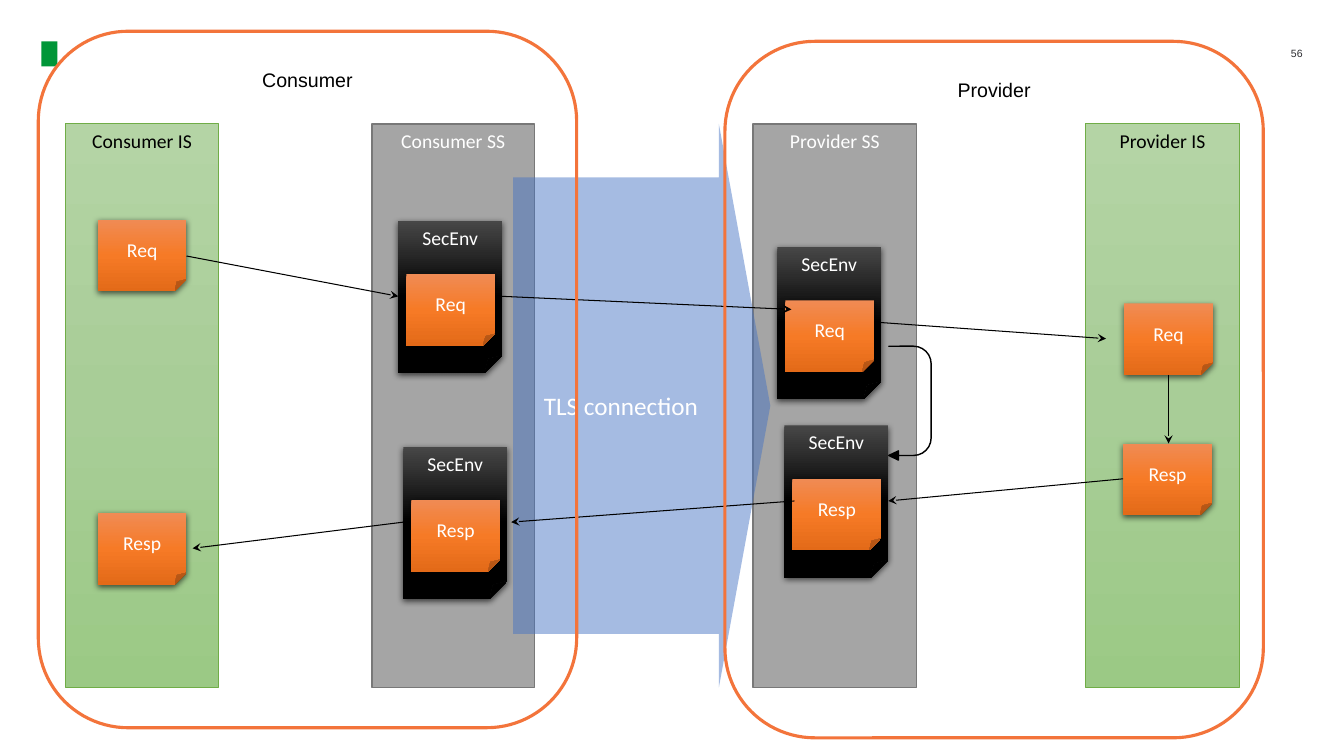
import copy

import lxml.etree
import pptx
import pptx.dml.color
import pptx.enum.shapes
import pptx.enum.text
import pptx.oxml.ns
import pptx.util

RGB = pptx.dml.color.RGBColor
SHAPE = pptx.enum.shapes.MSO_SHAPE
ALIGN = pptx.enum.text.PP_ALIGN
ANCHOR = pptx.enum.text.MSO_ANCHOR
qn = pptx.oxml.ns.qn
inches = pptx.util.Inches

BLACK, WHITE = RGB(0, 0, 0), RGB(255, 255, 255)
INK = RGB(0x2C, 0x2C, 0x30)
MARK_GREEN = RGB(0x00, 0x96, 0x38)
GREEN_EDGE = RGB(0x70, 0xAD, 0x47)
GREY, GREY_EDGE = RGB(0xA5, 0xA5, 0xA5), RGB(0x78, 0x78, 0x78)
BLUE, FRAME_ORANGE = RGB(0x44, 0x72, 0xC4), RGB(0xF3, 0x74, 0x3B)
GREEN_BLEND = (RGB(0xB4, 0xD4, 0xA5), RGB(0xA8, 0xCD, 0x97), RGB(0x9B, 0xC9, 0x85))
ORANGE_BLEND = (RGB(0xF0, 0x8B, 0x54), RGB(0xF6, 0x7A, 0x26), RGB(0xE3, 0x6A, 0x18))
BLACK_BLEND = (RGB(0x47, 0x47, 0x47), BLACK, BLACK)

# Content: positions in inches
SLIDE_W, SLIDE_H = 13.33, 7.5
COLUMN_TOP, COLUMN_H = 1.23, 5.59
SHEET_W, SHEET_H = 0.88, 0.71
ENV_W, ENV_H = 1.03, 1.51
SHEET_IN_ENV = (0.08, 0.53)
CORNER = 0.167

SYSTEMS = [("Consumer IS", 0.65), ("Provider IS", 10.77)]
SERVERS = [("Consumer SS", 3.69, 1.61), ("Provider SS", 7.47, 1.62)]
LOOSE_SHEETS = [("Req", 0.97, 2.18), ("Req", 11.15, 3.01),
                ("Resp", 11.14, 4.4), ("Resp", 0.97, 5.09)]
SECURE_ENVS = [("Req", 3.95, 2.19), ("Req", 7.71, 2.45),
               ("Resp", 7.78, 4.22), ("Resp", 4.0, 4.43)]
MESSAGES = [  # start x, y, end x, y, along the route
    (1.85, 2.54, 3.95, 2.94), (4.98, 2.94, 7.85, 3.07), (8.74, 3.2, 10.97, 3.36),
    (11.59, 3.72, 11.59, 4.4),
    (11.14, 4.75, 8.81, 4.97), (7.88, 4.97, 5.07, 5.18), (4.0, 5.18, 1.91, 5.44)]
PARTIES = [("Consumer", 0.38, 0.31), ("Provider", 7.19, 0.41)]
PARTY_W, PARTY_H = 5.34, 6.91


def write(box, text, size=14, color=WHITE, font="Calibri", anchor=ANCHOR.TOP,
          align=ALIGN.CENTER, margins=(0.1, 0.05)):
    frame = box.text_frame
    frame.word_wrap = True
    frame.vertical_anchor = anchor
    frame.margin_left = frame.margin_right = inches(margins[0])
    frame.margin_top = frame.margin_bottom = inches(margins[1])
    para = frame.paragraphs[0]
    para.alignment = align
    span = para.add_run()
    span.text = text
    span.font.size = pptx.util.Pt(size)
    span.font.name = font
    span.font.color.rgb = color


def blend(box, colors):
    """Fill from top to bottom with three evenly spaced colours."""
    box.fill.gradient()
    box.fill.gradient_angle = 270
    stop_list = box._element.spPr.find(".//" + qn("a:gsLst"))
    stop_list.append(copy.deepcopy(stop_list[-1]))
    for index, (stop, color) in enumerate(zip(box.fill.gradient_stops, colors)):
        stop.color.rgb = color
        stop.position = index / 2


def set_adjustments(box, values):
    """Write the guides directly, as some presets list none by default."""
    guides = box._element.spPr.find(".//" + qn("a:avLst"))
    for guide in list(guides):
        guides.remove(guide)
    for number, value in enumerate(values, 1):
        name = "adj" if len(values) == 1 else f"adj{number}"
        lxml.etree.SubElement(guides, qn("a:gd"), name=name,
                              fmla=f"val {round(value * 100000)}")


def add_box(page, kind, left, top, width, height, fill=None, edge=None,
            weight=1.0, adjust=()):
    box = page.shapes.add_shape(kind, inches(left), inches(top),
                                inches(width), inches(height))
    box.shadow.inherit = False
    if adjust:
        set_adjustments(box, adjust)
    if isinstance(fill, RGB):
        box.fill.solid()
        box.fill.fore_color.rgb = fill
    elif fill:
        blend(box, fill)
    else:
        box.fill.background()
    if edge is None:
        box.line.fill.background()
    else:
        box.line.color.rgb = edge
        box.line.width = pptx.util.Pt(weight)
    return box


def add_folded(page, left, top, width, height, colors, text, anchor):
    box = add_box(page, SHAPE.FOLDED_CORNER, left, top, width, height, colors,
                  adjust=(CORNER,))
    effects = box._element.spPr.find(qn("a:effectLst"))
    shadow = lxml.etree.SubElement(effects, qn("a:outerShdw"), blurRad="57150",
                                   dist="19050", dir="5400000", algn="ctr",
                                   rotWithShape="0")
    tone = lxml.etree.SubElement(shadow, qn("a:srgbClr"), val="000000")
    lxml.etree.SubElement(tone, qn("a:alpha"), val="62000")
    write(box, text, anchor=anchor)


def add_sheet(page, text, left, top):
    add_folded(page, left, top, SHEET_W, SHEET_H, ORANGE_BLEND, text, ANCHOR.MIDDLE)


def add_message(page, ends):
    arrow = page.shapes.add_connector(pptx.enum.shapes.MSO_CONNECTOR.STRAIGHT,
                                      *(inches(value) for value in ends))
    arrow.line.color.rgb = BLACK
    arrow.line.width = pptx.util.Pt(0.75)
    properties = arrow._element.spPr
    lxml.etree.SubElement(properties.find(qn("a:ln")), qn("a:tailEnd"), type="stealth")
    lxml.etree.SubElement(properties, qn("a:effectLst"))


def main():
    deck = pptx.Presentation()
    deck.slide_width, deck.slide_height = inches(SLIDE_W), inches(SLIDE_H)
    page = deck.slides.add_slide(deck.slide_layouts[6])

    # Corner mark and page number
    add_box(page, SHAPE.RECTANGLE, 0.41, 0.41, 0.16, 0.25, MARK_GREEN)
    number = page.shapes.add_textbox(inches(12.53), inches(0.41),
                                     inches(0.39), inches(0.24))
    write(number, "56", 7.5, INK, "Arial", ANCHOR.MIDDLE, ALIGN.RIGHT, (0, 0))

    # Columns for the systems and their servers
    for name, left in SYSTEMS:
        column = add_box(page, SHAPE.RECTANGLE, left, COLUMN_TOP, 1.52, COLUMN_H,
                         GREEN_BLEND, GREEN_EDGE, 0.75)
        write(column, name, color=BLACK)
    for name, left, width in SERVERS:
        column = add_box(page, SHAPE.RECTANGLE, left, COLUMN_TOP, width, COLUMN_H,
                         GREY, GREY_EDGE)
        write(column, name)

    # Translucent connection between the servers
    tunnel = add_box(page, SHAPE.RIGHT_ARROW, 5.09, COLUMN_TOP, 2.55, COLUMN_H,
                     BLUE, adjust=(0.81, 0.2))
    tone = tunnel._element.spPr.find(qn("a:solidFill"))[0]
    lxml.etree.SubElement(tone, qn("a:alpha"), val="48000")
    write(tunnel, "TLS connection", 18, anchor=ANCHOR.MIDDLE)

    # Message sheets, loose and inside secure environments
    for text, left, top in LOOSE_SHEETS:
        add_sheet(page, text, left, top)
    for text, left, top in SECURE_ENVS:
        add_folded(page, left, top, ENV_W, ENV_H, BLACK_BLEND, "SecEnv", ANCHOR.TOP)
        add_sheet(page, text, left + SHEET_IN_ENV[0], top + SHEET_IN_ENV[1])

    # Route of the messages
    for ends in MESSAGES:
        add_message(page, ends)
    turn = add_box(page, SHAPE.U_TURN_ARROW, 8.46, 3.79, 1.13, 0.42, BLACK, BLACK,
                   adjust=(0, 0.109, 0.228, 0.416, 1))
    turn.rotation = 90

    # Frames around the two parties
    for name, left, top in PARTIES:
        party = add_box(page, SHAPE.ROUNDED_RECTANGLE, left, top, PARTY_W, PARTY_H,
                        edge=FRAME_ORANGE, weight=2.25, adjust=(CORNER,))
        write(party, name, color=BLACK, font="Arial", margins=(0.1, 0.1))

    deck.save("out.pptx")


if __name__ == "__main__":
    main()
